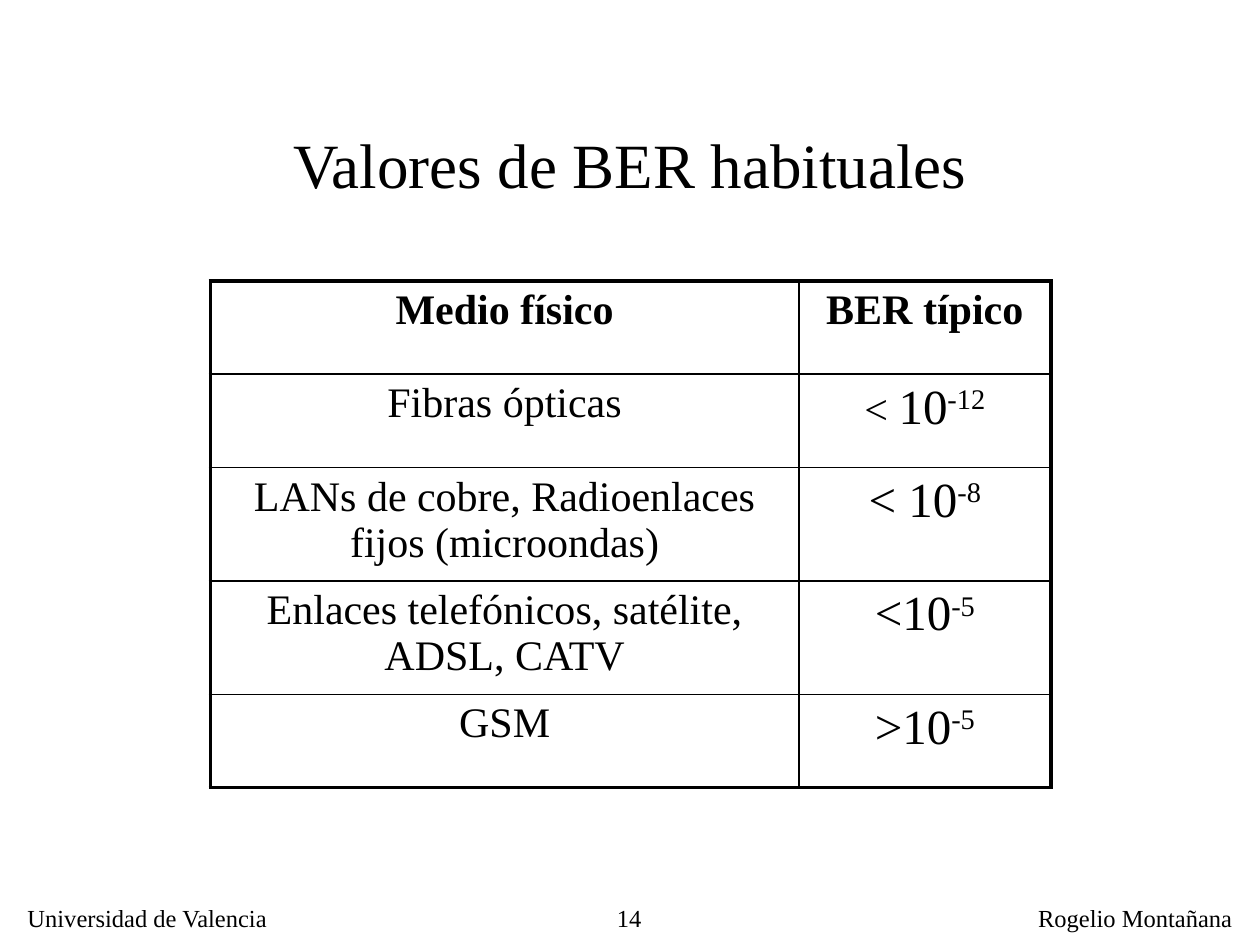
from dataclasses import dataclass

from lxml.etree import SubElement
from pptx import Presentation
from pptx.dml.color import RGBColor
from pptx.enum.text import MSO_ANCHOR as Anchor, PP_ALIGN as Align
from pptx.oxml.ns import qn
from pptx.util import Inches, Pt


@dataclass(frozen=True)
class Theme:
    font: str = "Times New Roman"
    ink: str = "000000"
    title: int = 36
    body: int = 24
    value: int = 28
    footer: int = 14
    outer_line: float = 2.25
    inner_line: float = 1


THEME = Theme()

COLUMN_WIDTHS = (4.67, 2)
ROW_HEIGHTS = (0.74, 0.74, 0.84, 0.84, 0.74)
HEADERS = ("Medio físico", "BER típico")
# Medium, then the typical BER as (text, size) runs and its exponent
MEDIA = (
    ("Fibras ópticas", (("< ", THEME.body), ("10", THEME.value)), "-12"),
    ("LANs de cobre, Radioenlaces fijos (microondas)", (("< 10", THEME.value),), "-8"),
    ("Enlaces telefónicos, satélite, ADSL, CATV", (("<10", THEME.value),), "-5"),
    ("GSM", ((">10", THEME.value),), "-5"),
)


def add_run(paragraph, text, size, bold=False, superscript=False):
    run = paragraph.add_run()
    run.text = text
    font = run.font
    font.name = THEME.font
    font.size = Pt(size)
    font.bold = bold
    font.color.rgb = RGBColor.from_string(THEME.ink)
    if superscript:
        run._r.get_or_add_rPr().set("baseline", "30000")


def add_text(slide, text, box, size, align=Align.LEFT, anchor=Anchor.TOP, wrap=True):
    shape = slide.shapes.add_textbox(*(Inches(length) for length in box))
    frame = shape.text_frame
    frame.word_wrap = wrap
    frame.vertical_anchor = anchor
    paragraph = frame.paragraphs[0]
    paragraph.alignment = align
    add_run(paragraph, text, size)


def set_borders(cell, widths):
    """Draw the left, right, top and bottom borders with widths in points."""
    properties = cell._tc.get_or_add_tcPr()
    for side, width in zip(("lnL", "lnR", "lnT", "lnB"), widths):
        line = SubElement(properties, qn(f"a:{side}"), w=str(Pt(width)))
        fill = SubElement(line, qn("a:solidFill"))
        SubElement(fill, qn("a:srgbClr"), val=THEME.ink)


def style_cells(table):
    last_row, last_column = len(table.rows) - 1, len(table.columns) - 1
    for row in range(last_row + 1):
        for column in range(last_column + 1):
            cell = table.cell(row, column)
            on_edge = (column == 0, column == last_column, row == 0, row == last_row)
            set_borders(cell, [THEME.outer_line if edge else THEME.inner_line
                               for edge in on_edge])
            cell.fill.background()
            cell.text_frame.paragraphs[0].alignment = Align.CENTER


def add_ber_table(slide):
    frame = slide.shapes.add_table(
        len(ROW_HEIGHTS), len(COLUMN_WIDTHS), Inches(1.67), Inches(2.23),
        Inches(sum(COLUMN_WIDTHS)), Inches(sum(ROW_HEIGHTS)))
    table = frame.table
    table.first_row = table.horz_banding = False
    for column, width in zip(table.columns, COLUMN_WIDTHS):
        column.width = Inches(width)
    for row, height in zip(table.rows, ROW_HEIGHTS):
        row.height = Inches(height)
    style_cells(table)

    for column, header in enumerate(HEADERS):
        add_run(table.cell(0, column).text_frame.paragraphs[0], header,
                THEME.body, bold=True)
    for row, (medium, value_runs, exponent) in enumerate(MEDIA, start=1):
        add_run(table.cell(row, 0).text_frame.paragraphs[0], medium, THEME.body)
        value = table.cell(row, 1).text_frame.paragraphs[0]
        for text, size in value_runs:
            add_run(value, text, size)
        add_run(value, exponent, THEME.value, superscript=True)


def add_footer(slide):
    add_text(slide, "14", (4.13, 7.12, 1.06, 0.31), THEME.footer, Align.RIGHT)
    add_text(slide, "Universidad de Valencia", (0.12, 7.12, 2.13, 0.33),
             THEME.footer, wrap=False)
    add_text(slide, "Rogelio Montañana", (8.14, 7.12, 1.74, 0.33),
             THEME.footer, wrap=False)


def main():
    presentation = Presentation()
    presentation.slide_width = Inches(10)
    presentation.slide_height = Inches(7.5)
    slide = presentation.slides.add_slide(presentation.slide_layouts[6])
    add_footer(slide)
    add_text(slide, "Valores de BER habituales", (0.75, 0.67, 8.5, 1.25),
             THEME.title, Align.CENTER, Anchor.MIDDLE)
    add_ber_table(slide)
    presentation.save("out.pptx")


if __name__ == "__main__":
    main()
